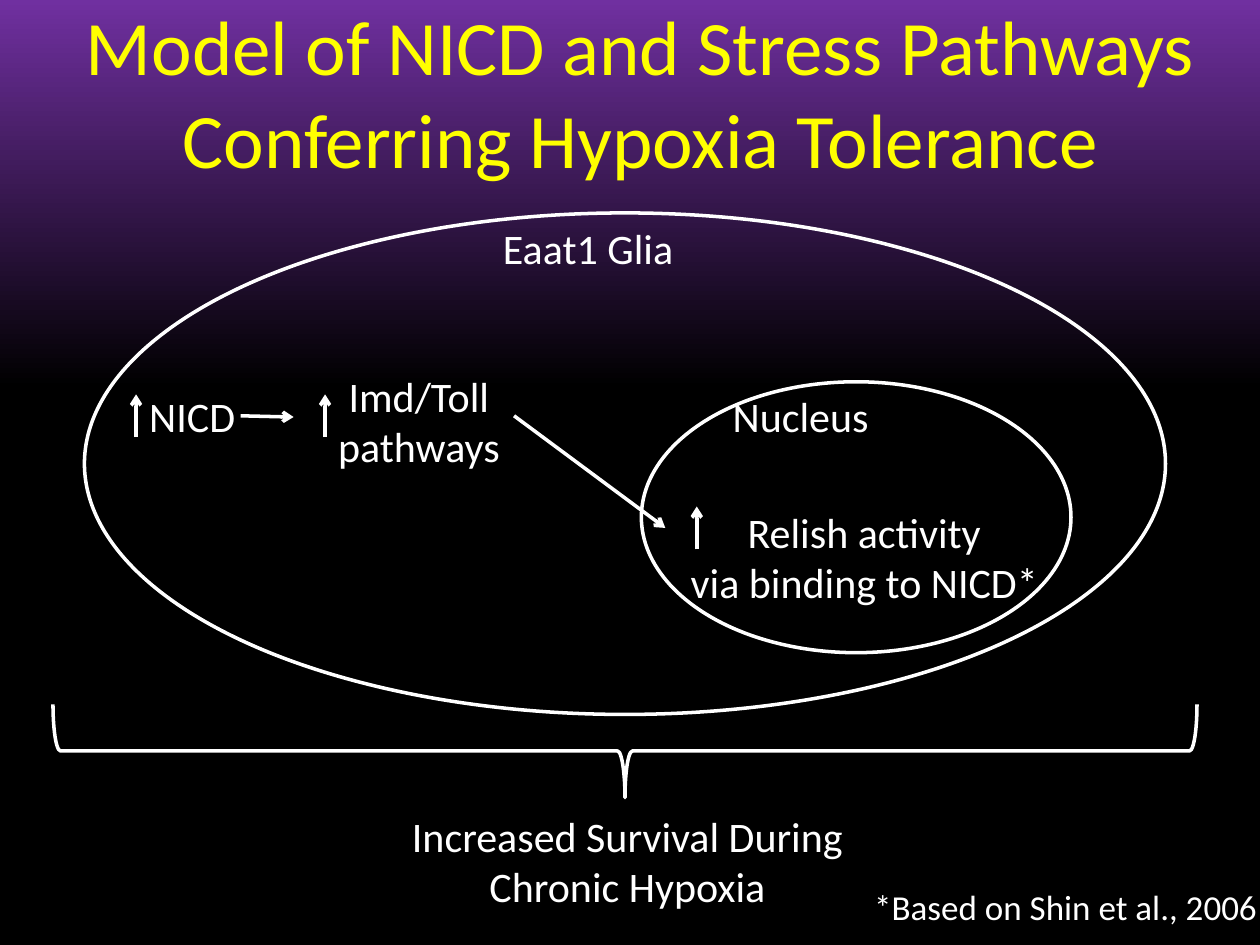
"""Builds a slide on the NICD and stress pathway model of hypoxia tolerance."""
from dataclasses import dataclass

from lxml import etree
from pptx import Presentation
from pptx.dml.color import RGBColor
from pptx.enum.shapes import MSO_CONNECTOR, MSO_SHAPE
from pptx.enum.text import MSO_ANCHOR, MSO_AUTO_SIZE, PP_ALIGN
from pptx.oxml.ns import qn
from pptx.util import Inches, Pt

BLACK = RGBColor(0x00, 0x00, 0x00)
PURPLE = RGBColor(0x70, 0x30, 0xA0)
WHITE = RGBColor(0xFF, 0xFF, 0xFF)
YELLOW = RGBColor(0xFF, 0xFF, 0x00)
ELLIPSE, BRACE = MSO_SHAPE.OVAL, MSO_SHAPE.RIGHT_BRACE
STRAIGHT = MSO_CONNECTOR.STRAIGHT
CENTER, LEFT = PP_ALIGN.CENTER, PP_ALIGN.LEFT
TOP, FIXED = MSO_ANCHOR.TOP, MSO_AUTO_SIZE.NONE

PAGE_WIDTH, PAGE_HEIGHT = Inches(10), Inches(7.5)
COLUMNS = 100
UNIT = PAGE_WIDTH // COLUMNS
FONT = "Calibri"
LINE_WIDTH = Pt(2)
TITLE_ONLY = 5


@dataclass
class Box:
    """A rectangle measured in grid columns and rows."""
    left: float
    top: float
    width: float
    height: float

    def inner(self, left, top, width, height):
        """Return a box placed relative to this one."""
        return Box(self.left + left, self.top + top, width, height)

    def point(self, column, row):
        """Return a point relative to this box as slide lengths."""
        return round((self.left + column) * UNIT), round((self.top + row) * UNIT)

    def lengths(self):
        """Return left, top, width and height as slide lengths."""
        return (*self.point(0, 0), round(self.width * UNIT), round(self.height * UNIT))


def write_text(shape, text, size=24, color=WHITE, align=CENTER):
    """Fill a shape with one paragraph for each line of text."""
    frame = shape.text_frame
    frame.word_wrap = True
    frame.auto_size = FIXED
    frame.vertical_anchor = TOP
    frame.text = text
    for para in frame.paragraphs:
        para.alignment = align
        for span in para.runs:
            span.font.name = FONT
            span.font.size = Pt(size)
            span.font.color.rgb = color


def add_label(shapes, box, text, **style):
    """Add a text box."""
    write_text(shapes.add_textbox(*box.lengths()), text, **style)


def add_outline(shapes, kind, box):
    """Add an unfilled white preset shape."""
    shape = shapes.add_shape(kind, *box.lengths())
    shape.shadow.inherit = False
    shape.fill.background()
    shape.line.color.rgb = WHITE
    shape.line.width = LINE_WIDTH
    return shape


def add_arrow(shapes, box, start, end):
    """Add an arrow between two points of a box."""
    arrow = shapes.add_connector(STRAIGHT, *box.point(*start), *box.point(*end))
    arrow.line.color.rgb = WHITE
    arrow.line.width = LINE_WIDTH
    properties = arrow._element.spPr
    etree.SubElement(properties.find(qn("a:ln")), qn("a:tailEnd"), type="arrow")
    etree.SubElement(properties, qn("a:effectLst"))


def add_increase(shapes, box, column, row):
    """Add a short upward arrow that ends at the given row."""
    add_arrow(shapes, box, (column, row + 3.4), (column, row))


def paint_background(page):
    """Fade the page from black up to purple at its top."""
    fill = page.background.fill
    fill.gradient()
    fill.gradient_angle = 90
    for stop, position, color in zip(fill.gradient_stops, (0.59, 1), (BLACK, PURPLE)):
        stop.position = position
        stop.color.rgb = color


def place_title(page, box):
    """Place and format the title."""
    title = page.shapes.title
    title.left, title.top, title.width, title.height = box.lengths()
    write_text(title, "Model of NICD and Stress Pathways Conferring Hypoxia Tolerance",
               size=44, color=YELLOW)


def draw_nucleus(shapes, box):
    """Draw the nucleus and the Relish activity inside it."""
    add_label(shapes, box.inner(2.4, 9.4, 30.6, 9.1), "Relish activity\nvia binding to NICD*")
    add_increase(shapes, box, 4.4, 9.9)
    add_outline(shapes, ELLIPSE, box)
    add_label(shapes, box.inner(1.9, 0.2, 21.5, 5), "Nucleus")


def draw_cell(shapes, box):
    """Draw the glial cell with its signalling steps."""
    add_outline(shapes, ELLIPSE, box)
    add_label(shapes, box.inner(19.9, 0.3, 40.9, 5), "Eaat1 Glia ")
    add_label(shapes, box.inner(3.3, 13.6, 10.5, 5), "NICD")
    add_label(shapes, box.inner(17.4, 12, 18.3, 9.1), "Imd/Toll pathways")
    for column in (4.1, 19.1):
        add_increase(shapes, box, column, 14.4)
    add_arrow(shapes, box, (12.4, 16.1), (16.6, 16.2))
    draw_nucleus(shapes, box.inner(44.2, 13.4, 34.1, 21.5))
    add_arrow(shapes, box, (34.1, 16.1), (46.1, 25))


def draw_outcome(shapes, box):
    """Draw a downward brace over the outcome."""
    upright = box.inner((box.width - box.height) / 2, (box.height - box.width) / 2,
                        box.height, box.width)
    brace = add_outline(shapes, BRACE, upright)
    brace.rotation = 90
    brace.adjustments[0], brace.adjustments[1] = 0.08, 0.5
    add_label(shapes, box.inner(26.6, 7.9, 38, 9.1), "Increased Survival During Chronic Hypoxia")


def main():
    """Build and save the deck."""
    deck = Presentation()
    deck.slide_width, deck.slide_height = PAGE_WIDTH, PAGE_HEIGHT
    page = deck.slides.add_slide(deck.slide_layouts[TITLE_ONLY])
    paint_background(page)
    place_title(page, Box(1.7, -0.6, 98.3, 15.8))
    draw_cell(page.shapes.add_group_shape().shapes, Box(6.7, 16.9, 85.8, 39.8))
    draw_outcome(page.shapes, Box(4.2, 55.9, 90.8, 7.4))
    add_label(page.shapes, Box(68.4, 69.8, 34, 4.4), "*Based on Shin et al., 2006",
              size=20, align=LEFT)
    deck.save("out.pptx")


if __name__ == "__main__":
    main()
